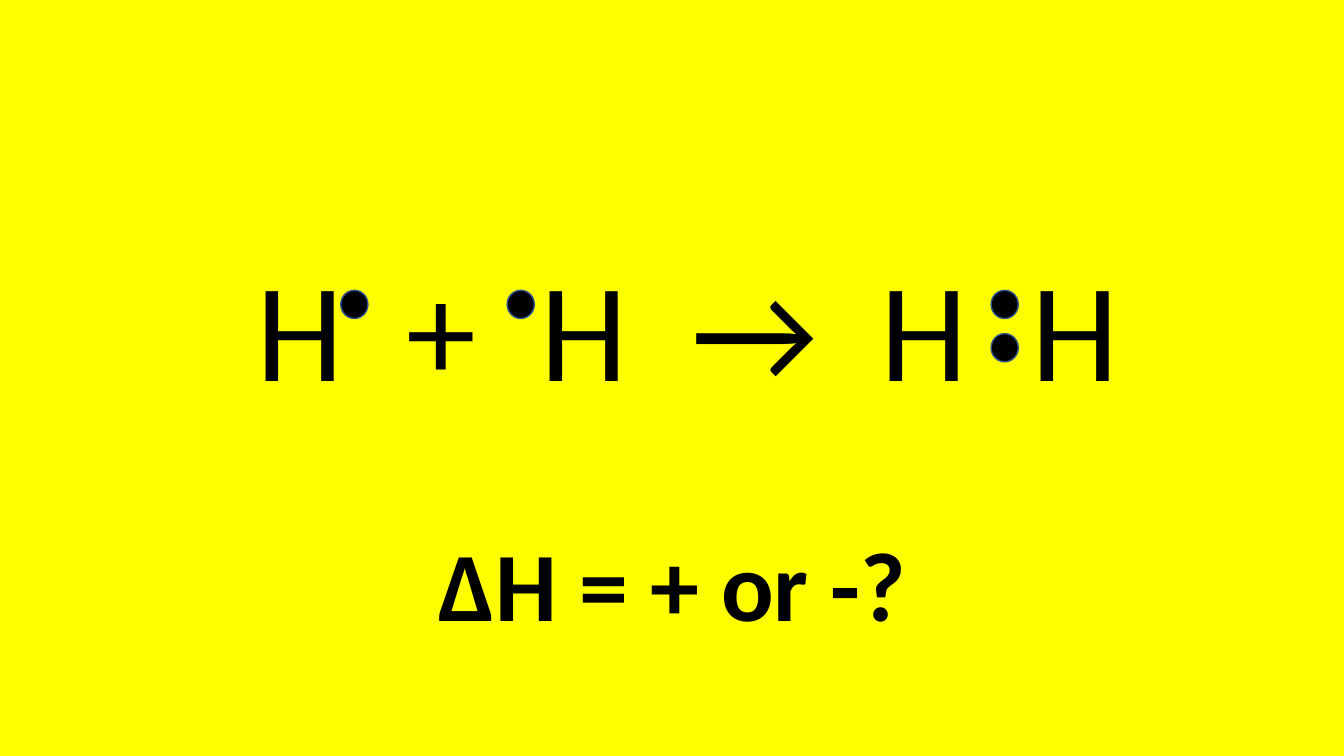
from pptx import Presentation
from pptx.dml.color import RGBColor
from pptx.enum.shapes import MSO_SHAPE as Shape
from pptx.enum.text import MSO_ANCHOR as Anchor, PP_ALIGN as Align
from pptx.oxml.ns import qn
from pptx.util import Inches, Pt
from lxml import etree

COLORS = {"background": "FFFF00", "ink": "000000", "electron_line": "325491"}
FONT = "Calibri"

# Each term of the equation with the x of its centre
EQUATION = [("H", 2.98), ("+", 4.38), ("H", 5.79),
            ("→", 7.49), ("H", 9.17), ("H", 10.66)]
QUESTION = "ΔH = + or -?"
ELECTRONS = [(3.38, 2.88), (5.03, 2.88), (9.83, 2.88), (9.83, 3.31)]
ELECTRON_SIZE = (0.27, 0.28)
BOX = (0.13, 2.3, 13.08, 4.13)
INSET = 0.1


def rgb(name):
    return RGBColor.from_string(COLORS[name])


def add_center_tabs(paragraph, positions):
    tabs = etree.SubElement(paragraph._p.get_or_add_pPr(), qn("a:tabLst"))
    for position in positions:
        etree.SubElement(tabs, qn("a:tab"), pos=str(Inches(position)), algn="ctr")


def format_line(paragraph, size, bold, align):
    paragraph.alignment = align
    paragraph.line_spacing = 0.9
    for run in paragraph.runs:
        run.font.name = FONT
        run.font.size = Pt(size)
        run.font.bold = bold
        run.font.color.rgb = rgb("ink")


def add_reaction(slide):
    frame = slide.shapes.add_textbox(*map(Inches, BOX)).text_frame
    frame.word_wrap = True
    frame.vertical_anchor = Anchor.BOTTOM
    frame.margin_left = frame.margin_right = Inches(INSET)

    equation = frame.paragraphs[0]
    equation.text = "".join("\t" + term for term, _ in EQUATION)
    add_center_tabs(equation, [center - BOX[0] - INSET for _, center in EQUATION])
    format_line(equation, 100, False, Align.LEFT)

    question = frame.add_paragraph()
    question.text = QUESTION
    question.space_before = Pt(90)
    format_line(question, 70, True, Align.CENTER)


def add_electron(slide, left, top):
    electron = slide.shapes.add_shape(
        Shape.OVAL, *map(Inches, (left, top, *ELECTRON_SIZE)))
    electron.shadow.inherit = False
    electron.fill.solid()
    electron.fill.fore_color.rgb = rgb("ink")
    electron.line.color.rgb = rgb("electron_line")
    electron.line.width = Pt(1)


def main():
    deck = Presentation()
    deck.slide_width, deck.slide_height = Inches(13.33), Inches(7.5)
    slide = deck.slides.add_slide(deck.slide_layouts[6])
    slide.background.fill.solid()
    slide.background.fill.fore_color.rgb = rgb("background")
    add_reaction(slide)
    for left, top in ELECTRONS:
        add_electron(slide, left, top)
    deck.save("out.pptx")


if __name__ == "__main__":
    main()
